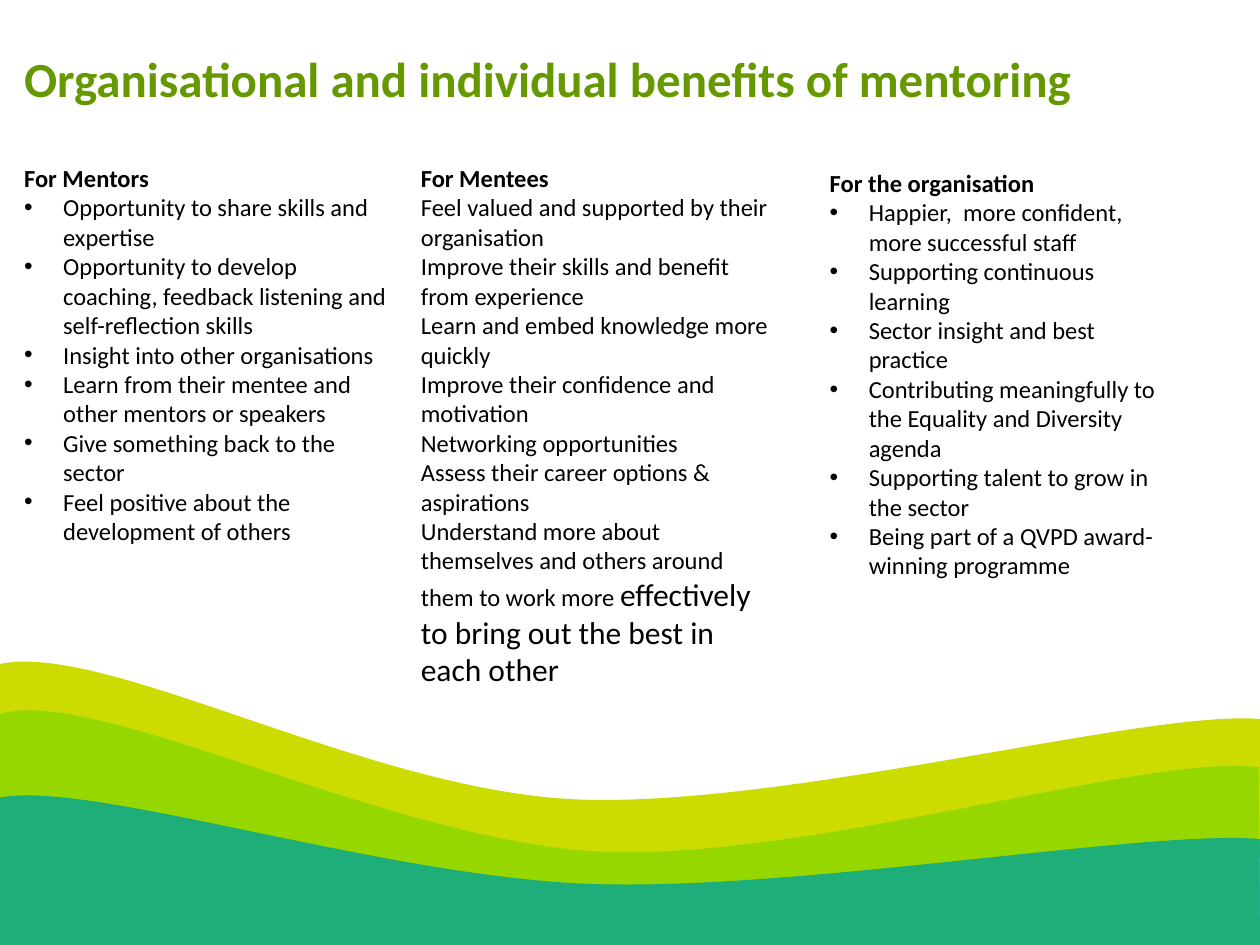
from dataclasses import dataclass

import pptx
import pptx.dml.color
import pptx.enum.text
import pptx.oxml.ns
import pptx.util
from lxml import etree

RGBColor = pptx.dml.color.RGBColor
LIME = RGBColor(0xCC, 0xDC, 0x00)
GREEN = RGBColor(0x97, 0xD7, 0x00)
TEAL = RGBColor(0x00, 0xA4, 0x99)
TITLE_GREEN = RGBColor(0x66, 0x99, 0x00)
BLACK = RGBColor(0x00, 0x00, 0x00)

SLIDE_WIDTH = pptx.util.Inches(10)
SLIDE_HEIGHT = pptx.util.Inches(7.5)
FONT_NAME = "Calibri"
BODY_SIZE = 14
BULLET_INDENT = pptx.util.Inches(0.31)

Point = tuple[float, float]
Box = tuple[float, float, float, float]


@dataclass(frozen=True)
class Wave:
    """A band under two joined Bezier curves; points in percent of the slide."""
    color: RGBColor
    crest: tuple[Point, ...]
    bottom: float
    opacity: int = 100


@dataclass(frozen=True)
class Column:
    """A heading with its benefits; box in percent of the slide."""
    box: Box
    heading: str
    benefits: tuple[str, ...]
    bulleted: bool = True
    large_ending: str = ""


WAVES = (
    Wave(LIME, ((0, 70.27), (8.5, 67.87), (29, 83.6), (45.7, 84.6),
                (62.4, 85.55), (91, 75.05), (100, 76.1)), 90.8),
    Wave(GREEN, ((0, 75.6), (7.2, 72.27), (31.2, 89.2), (47.8, 90.13),
                 (64.5, 91.07), (91.2, 79.6), (99.9, 81.2)), 100),
    Wave(TEAL, ((0, 84.4), (7.3, 82.53), (30.3, 92.8), (47, 93.55),
                (63.6, 94.27), (91.2, 87.73), (100, 88.8)), 100, opacity=80),
)

TITLE_BOX = (0.93, 4.45, 95.5, 7.6)
COLUMNS = (
    Column((0.93, 16.6, 31.5, 42.13), "For Mentors", (
        "Opportunity to share skills and expertise",
        "Opportunity to develop coaching, feedback listening and self-reflection skills",
        "Insight into other organisations",
        "Learn from their mentee and other mentors or speakers",
        "Give something back to the sector",
        "Feel positive about the development of others",
    )),
    Column((32.42, 16.6, 29.7, 57.47), "For Mentees", (
        "Feel valued and supported by their organisation",
        "Improve their skills and benefit from experience",
        "Learn and embed knowledge more quickly",
        "Improve their confidence and motivation",
        "Networking opportunities",
        "Assess their career options & aspirations",
        "Understand more about themselves and others around them to work more ",
    ), bulleted=False, large_ending="effectively to bring out the best in each other"),
    Column((64.87, 17.12, 29.7, 42.13), "For the organisation", (
        "Happier,  more confident, more successful staff",
        "Supporting continuous learning",
        "Sector insight and best practice",
        "Contributing meaningfully to the Equality and Diversity agenda",
        "Supporting talent to grow in the sector",
        "Being part of a QVPD award-winning programme",
    )),
)


def across(percent: float) -> int:
    return round(SLIDE_WIDTH * percent / 100)


def down(percent: float) -> int:
    return round(SLIDE_HEIGHT * percent / 100)


def bend_crest(shape, curve_count: int) -> None:
    """Turn each leading group of three line segments into one Bezier curve."""
    lines = list(shape._element.iter(pptx.oxml.ns.qn("a:lnTo")))
    for first in range(0, 3 * curve_count, 3):
        curve = etree.Element(pptx.oxml.ns.qn("a:cubicBezTo"))
        lines[first].addprevious(curve)
        for line in lines[first:first + 3]:
            curve.append(line[0])
            line.getparent().remove(line)


def draw_wave(slide, wave: Wave) -> None:
    start, *controls = wave.crest
    outline = controls + [(100, wave.bottom), (0, wave.bottom)]
    builder = slide.shapes.build_freeform(across(start[0]), down(start[1]))
    builder.add_line_segments([(across(x), down(y)) for x, y in outline])
    shape = builder.convert_to_shape()
    bend_crest(shape, len(controls) // 3)
    shape.shadow.inherit = False
    shape.line.fill.background()
    shape.fill.solid()
    shape.fill.fore_color.rgb = wave.color
    if wave.opacity < 100:
        color = shape._element.spPr.find(".//" + pptx.oxml.ns.qn("a:srgbClr"))
        alpha = etree.SubElement(color, pptx.oxml.ns.qn("a:alpha"))
        alpha.set("val", str(wave.opacity * 1000))


def add_text_frame(slide, box: Box):
    left, top, width, height = box
    text_box = slide.shapes.add_textbox(across(left), down(top), across(width), down(height))
    text_box.text_frame.word_wrap = True
    text_box.text_frame.auto_size = pptx.enum.text.MSO_AUTO_SIZE.SHAPE_TO_FIT_TEXT
    return text_box.text_frame


def style(paragraph, size: float, color: RGBColor, bold: bool) -> None:
    font = paragraph.font
    font.name = FONT_NAME
    font.size = pptx.util.Pt(size)
    font.color.rgb = color
    font.bold = bold


def add_bullet(paragraph) -> None:
    properties = paragraph._p.get_or_add_pPr()
    properties.set("marL", str(BULLET_INDENT))
    properties.set("indent", str(-BULLET_INDENT))
    bullet_font = etree.SubElement(properties, pptx.oxml.ns.qn("a:buFont"))
    bullet_font.set("typeface", "Arial")
    bullet = etree.SubElement(properties, pptx.oxml.ns.qn("a:buChar"))
    bullet.set("char", "•")


def draw_column(slide, column: Column) -> None:
    frame = add_text_frame(slide, column.box)
    heading = frame.paragraphs[0]
    heading.text = column.heading
    style(heading, BODY_SIZE, BLACK, bold=True)
    for benefit in column.benefits:
        paragraph = frame.add_paragraph()
        paragraph.text = benefit
        if column.bulleted:
            add_bullet(paragraph)
        style(paragraph, BODY_SIZE, BLACK, bold=False)
    if column.large_ending:
        ending = paragraph.add_run()
        ending.text = column.large_ending
        ending.font.size = pptx.util.Pt(18)


def main() -> None:
    presentation = pptx.Presentation()
    presentation.slide_width = SLIDE_WIDTH
    presentation.slide_height = SLIDE_HEIGHT
    slide = presentation.slides.add_slide(presentation.slide_layouts[6])

    # Waves along the foot of the slide, back to front
    for wave in WAVES:
        draw_wave(slide, wave)

    # Title
    title = add_text_frame(slide, TITLE_BOX).paragraphs[0]
    title.text = "Organisational and individual benefits of mentoring"
    style(title, 28, TITLE_GREEN, bold=True)

    # Benefits for each group
    for column in COLUMNS:
        draw_column(slide, column)

    presentation.save("out.pptx")


if __name__ == "__main__":
    main()
